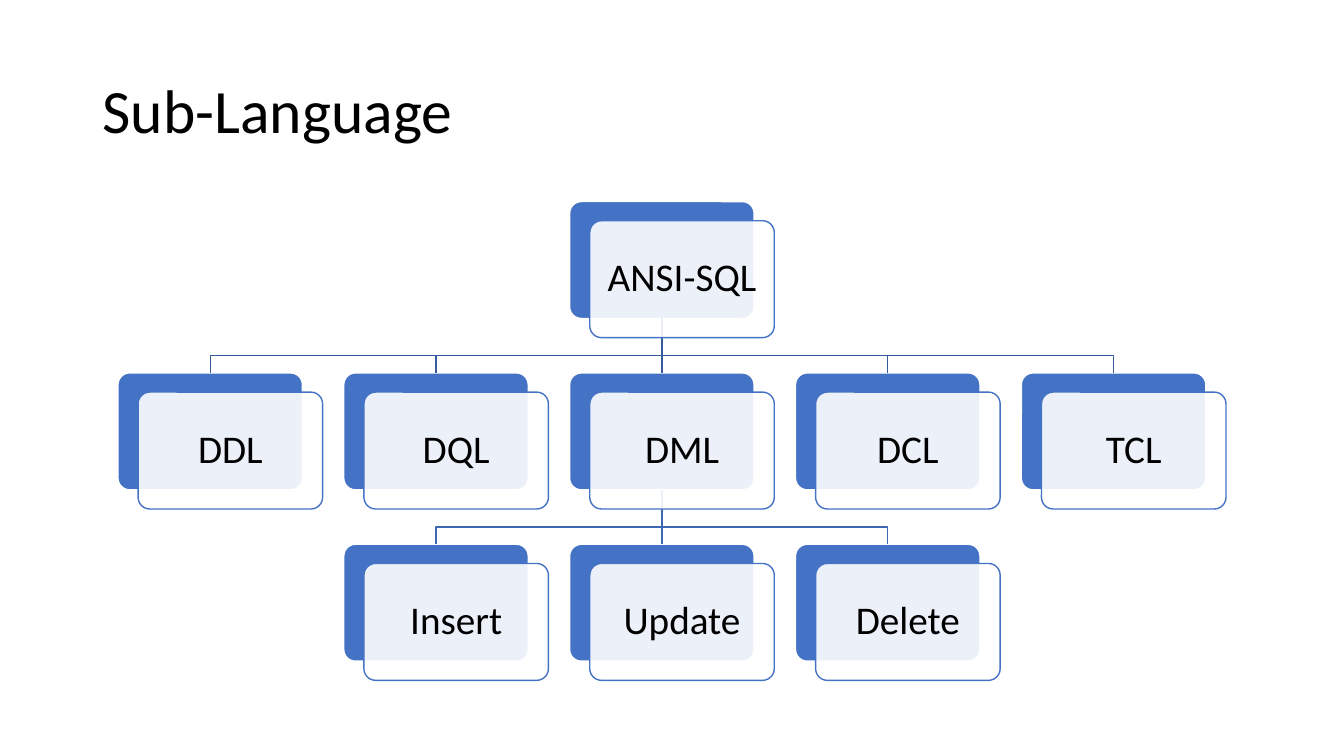
from dataclasses import dataclass

from lxml import etree
from pptx import Presentation
from pptx.dml.color import RGBColor
from pptx.enum.shapes import MSO_CONNECTOR, MSO_SHAPE
from pptx.enum.text import MSO_ANCHOR, PP_ALIGN
from pptx.oxml.ns import qn
from pptx.util import Inches, Pt

ROUNDED = MSO_SHAPE.ROUNDED_RECTANGLE
STRAIGHT = MSO_CONNECTOR.STRAIGHT
MIDDLE = MSO_ANCHOR.MIDDLE
LEFT, CENTER = PP_ALIGN.LEFT, PP_ALIGN.CENTER
BOTTOM_SITE, TOP_SITE = 2, 0


@dataclass(frozen=True)
class Theme:
    font: str = "Calibri"
    title_size: int = 44
    node_size: int = 28
    text: RGBColor = RGBColor(0, 0, 0)
    accent: RGBColor = RGBColor(0x44, 0x72, 0xC4)
    paper: RGBColor = RGBColor(0xFF, 0xFF, 0xFF)
    upper_line: RGBColor = RGBColor(0x36, 0x5B, 0x9D)
    lower_line: RGBColor = RGBColor(0x3E, 0x67, 0xB2)


# Tree grid, in inches
LEFT_EDGE, TOP_EDGE = 1.17, 2
COL_STEP, ROW_STEP = 2.24, 1.7
CARD_W, CARD_H = 1.83, 1.16
SHIFT_X, SHIFT_Y = 0.2, 0.19
BEND = 0.37

# Label: (column, row)
NODES = {
    "ANSI-SQL": (2, 0),
    "DDL": (0, 1), "DQL": (1, 1), "DML": (2, 1), "DCL": (3, 1), "TCL": (4, 1),
    "Insert": (1, 2), "Update": (2, 2), "Delete": (3, 2),
}
CHILDREN = {
    "ANSI-SQL": ("DDL", "DQL", "DML", "DCL", "TCL"),
    "DML": ("Insert", "Update", "Delete"),
}


class SlideBuilder:
    def __init__(self, slide, theme):
        self.s = slide
        self.theme = theme

    def set_text(self, sp, text, size, align):
        tf = sp.text_frame
        tf.word_wrap = True
        tf.vertical_anchor = MIDDLE
        p = tf.paragraphs[0]
        p.text = text
        p.alignment = align
        p.line_spacing = 0.9
        p.font.name = self.theme.font
        p.font.size = Pt(size)
        p.font.color.rgb = self.theme.text
        return tf

    def title(self, text, x, y, w, h):
        sp = self.s.shapes.add_textbox(Inches(x), Inches(y), Inches(w), Inches(h))
        self.set_text(sp, text, self.theme.title_size, LEFT)

    def card(self, x, y, fill, line):
        sp = self.s.shapes.add_shape(
            ROUNDED, Inches(x), Inches(y), Inches(CARD_W), Inches(CARD_H))
        sp.adjustments[0] = 0.1
        sp.shadow.inherit = False
        sp.fill.solid()
        sp.fill.fore_color.rgb = fill
        sp.line.color.rgb = line
        sp.line.width = Pt(1)
        return sp

    def back_card(self, x, y):
        return self.card(x, y, self.theme.accent, self.theme.paper)

    def front_card(self, text, x, y):
        sp = self.card(x + SHIFT_X, y + SHIFT_Y, self.theme.paper, self.theme.accent)
        # 90 % opaque fill
        color = sp._element.spPr.find(qn("a:solidFill"))[0]
        etree.SubElement(color, qn("a:alpha")).set("val", "90000")
        tf = self.set_text(sp, text, self.theme.node_size, CENTER)
        tf.margin_left = tf.margin_right = Inches(0.12)
        tf.margin_top = tf.margin_bottom = Inches(0.12)

    def straight_link(self, parent, child, color):
        c = self.s.shapes.add_connector(STRAIGHT, 0, 0, 0, 0)
        c.begin_connect(parent, BOTTOM_SITE)
        c.end_connect(child, TOP_SITE)
        c.line.color.rgb = color
        c.line.width = Pt(1)
        etree.SubElement(c._element.spPr, qn("a:effectLst"))

    def bent_link(self, parent, child, color):
        x1, y1 = parent.left + parent.width // 2, parent.top + parent.height
        x2, y2 = child.left + child.width // 2, child.top
        bend = y1 + Inches(BEND)
        fb = self.s.shapes.build_freeform(x1, y1)
        fb.add_line_segments([(x1, bend), (x2, bend), (x2, y2)], close=False)
        sp = fb.convert_to_shape()
        sp.shadow.inherit = False
        sp.fill.background()
        sp.line.color.rgb = color
        sp.line.width = Pt(1)


def main():
    prs = Presentation()
    prs.slide_width, prs.slide_height = Inches(13.33), Inches(7.5)
    theme = Theme()
    b = SlideBuilder(prs.slides.add_slide(prs.slide_layouts[6]), theme)

    b.title("Sub-Language", 0.92, 0.4, 11.5, 1.45)

    # Back cards
    places = {label: (LEFT_EDGE + col * COL_STEP, TOP_EDGE + row * ROW_STEP)
              for label, (col, row) in NODES.items()}
    cards = {label: b.back_card(x, y) for label, (x, y) in places.items()}

    # Links between levels, drawn under the front cards
    for parent, children in CHILDREN.items():
        parent_col, row = NODES[parent]
        color = theme.lower_line if row else theme.upper_line
        for child in children:
            same_col = NODES[child][0] == parent_col
            link = b.straight_link if same_col else b.bent_link
            link(cards[parent], cards[child], color)

    # Front cards with labels
    for label, (x, y) in places.items():
        b.front_card(label, x, y)

    prs.save("out.pptx")


if __name__ == "__main__":
    main()
